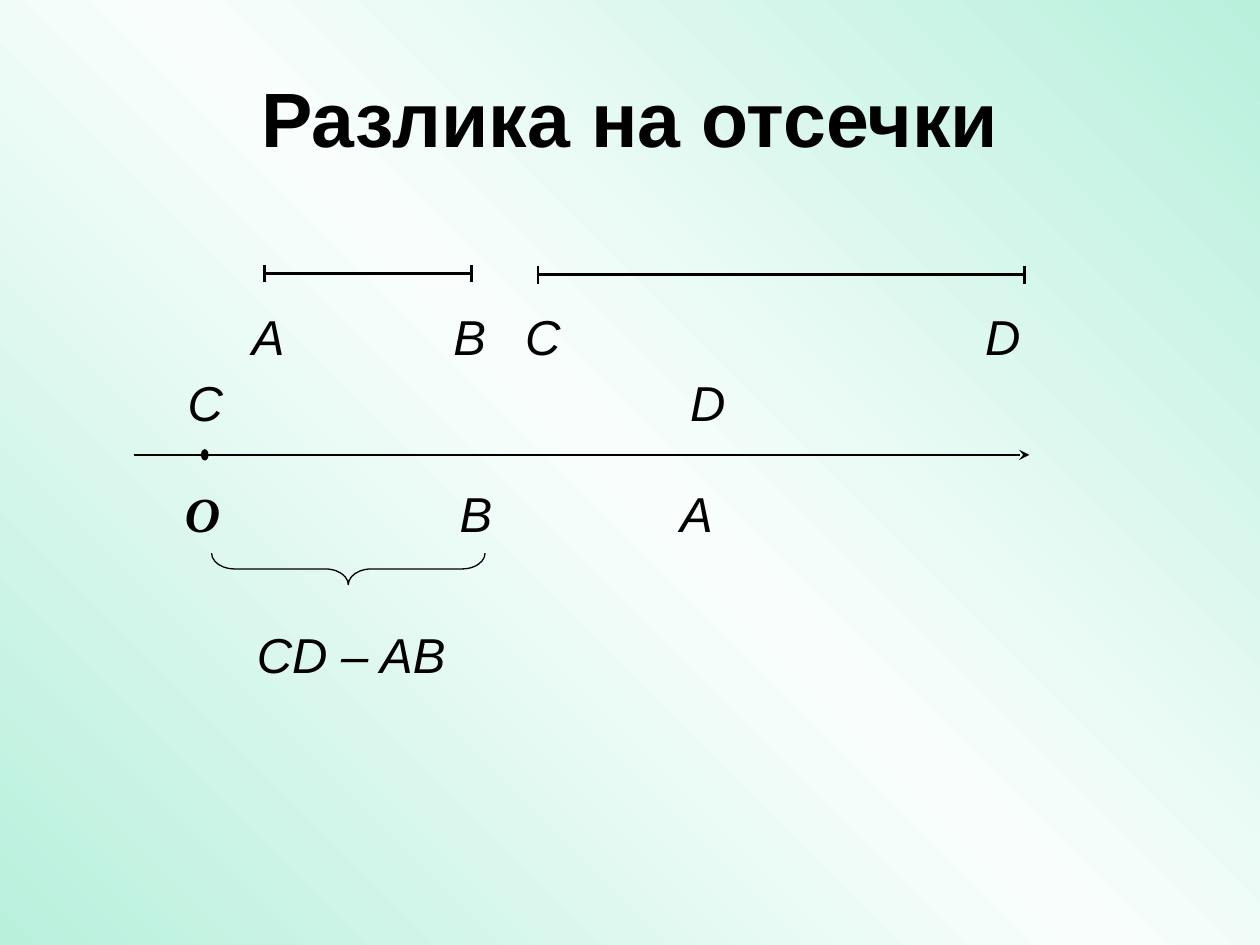
import copy

import lxml.etree
import pptx
import pptx.dml.color
import pptx.enum.shapes
import pptx.enum.text
import pptx.oxml.ns
import pptx.util

IN = pptx.util.Inches
qn = pptx.oxml.ns.qn


def color(value):
    return pptx.dml.color.RGBColor.from_string(value)


def add_line(shapes, x1, y1, x2, y2):
    """Add a plain black straight line; lengths are in inches."""
    c = shapes.add_connector(pptx.enum.shapes.MSO_CONNECTOR.STRAIGHT,
                             IN(x1), IN(y1), IN(x2), IN(y2))
    c.line.color.rgb = color("000000")
    c.line.width = pptx.util.Pt(1.5)
    lxml.etree.SubElement(c.element.spPr, qn("a:effectLst"))
    return c


prs = pptx.Presentation()
prs.slide_width, prs.slide_height = IN(10), IN(7.5)
s = prs.slides.add_slide(prs.slide_layouts[5])

# Diagonal background: green corners, pale middle
fill = s.background.fill
fill.gradient()
fill.gradient_angle = 45
first = next(s.element.iter(qn("a:gs")))
first.addnext(copy.deepcopy(first))
stops = [(0, "B8F0DC"), (0.5, "F9FEFC"), (1, "B8F0DC")]
for stop, (position, value) in zip(fill.gradient_stops, stops):
    stop.position = position
    stop.color.rgb = color(value)

title = s.shapes.title
title.left, title.top, title.width, title.height = IN(0.5), IN(0.3), IN(9), IN(1.25)
tf = title.text_frame
tf.text = "Разлика на отсечки"
tf.vertical_anchor = pptx.enum.text.MSO_ANCHOR.MIDDLE
p = tf.paragraphs[0]
p.alignment = pptx.enum.text.PP_ALIGN.CENTER
p.font.name, p.font.size, p.font.bold = "Arial", pptx.util.Pt(44), True
p.font.color.rgb = color("000000")

# Segments CD and AB with a tick at each end
tick = 0.07
for x1, x2, y in [(4.27, 8.13, 2.18), (2.1, 3.74, 2.17)]:
    segment = s.shapes.add_group_shape().shapes
    add_line(segment, x1, y, x2, y)
    for x in (x1, x2):
        add_line(segment, x, y - tick, x, y + tick)

# Ray with its origin
axis_y = 3.61
ray = add_line(s.shapes, 1.06, axis_y, 8.17, axis_y)
lxml.etree.SubElement(ray.element.spPr.find(qn("a:ln")), qn("a:tailEnd"), type="stealth")

origin = s.shapes.add_shape(pptx.enum.shapes.MSO_SHAPE.OVAL,
                            IN(1.6), IN(axis_y - 0.04), IN(0.05), IN(0.08))
origin.fill.solid()
origin.fill.fore_color.rgb = color("000000")

# Brace under the difference
brace = s.shapes.add_shape(pptx.enum.shapes.MSO_SHAPE.LEFT_BRACE,
                           IN(2.64), IN(3.43), IN(0.25), IN(2.17))
brace.rotation = 270
brace.adjustments[0] = 0.73
brace.fill.background()

for sp in (origin, brace):
    sp.shadow.inherit = False
    sp.line.color.rgb = color("000000")
    sp.line.width = pptx.util.Pt(0.75)

segment_row, above_row, below_row, result_row = 2.38, 2.91, 3.79, 4.91
labels = [
    ("А", 1.9, segment_row), ("B", 3.5, segment_row),
    ("C", 4.07, segment_row), ("D", 7.72, segment_row),
    ("C", 1.39, above_row), ("D", 5.38, above_row),
    ("O", 1.37, below_row), ("B", 3.55, below_row), ("А", 5.3, below_row),
    ("CD – AB", 1.94, result_row),
]
for text, x, y in labels:
    width = 0.54 if len(text) == 1 else 2.01
    tf = s.shapes.add_textbox(IN(x), IN(y), IN(width), IN(0.57)).text_frame
    tf.word_wrap = True
    tf.auto_size = pptx.enum.text.MSO_AUTO_SIZE.SHAPE_TO_FIT_TEXT
    tf.text = text
    p = tf.paragraphs[0]
    p.font.name = "Times New Roman" if text == "O" else "Arial"
    p.font.size = pptx.util.Pt(28)
    p.font.bold = text == "O"
    p.font.italic = True
    p.font.color.rgb = color("000000")

prs.save("out.pptx")
